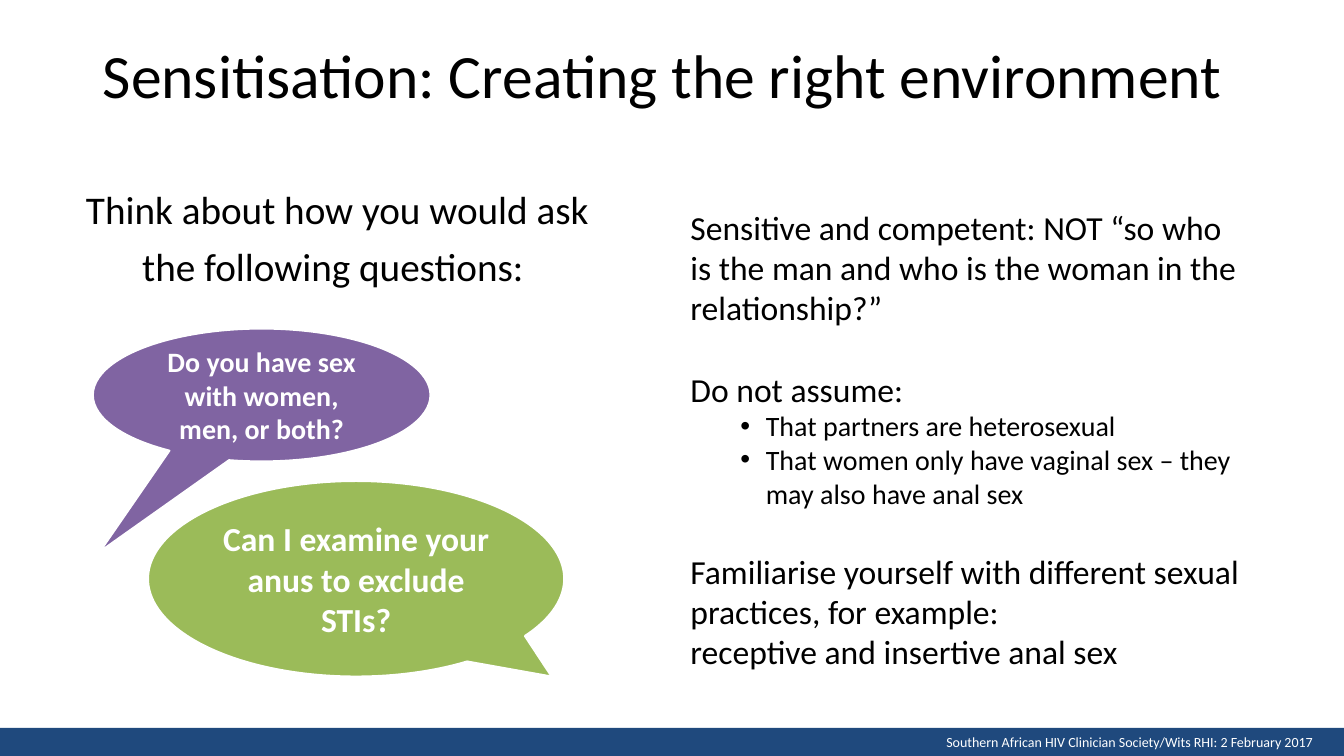
from lxml import etree
from pptx import Presentation
from pptx.dml.color import RGBColor
from pptx.enum.shapes import MSO_SHAPE
from pptx.enum.text import MSO_ANCHOR, PP_ALIGN
from pptx.oxml.ns import qn
from pptx.util import Cm, Pt

RECTANGLE = MSO_SHAPE.RECTANGLE
CALLOUT = MSO_SHAPE.OVAL_CALLOUT
LEFT, CENTER = PP_ALIGN.LEFT, PP_ALIGN.CENTER
MIDDLE = MSO_ANCHOR.MIDDLE

FONT = "Calibri"
COLORS = {
    "text": "000000",
    "white": "FFFFFF",
    "bar": "1F497D",
    "purple": "8064A2",
    "green": "9BBB59",
}
SECTION_GAP = 29.3  # one line of 24 pt text

# Text, size, bulleted, space before
ADVICE = [
    ("Sensitive and competent: NOT “so who is the man and who is the woman "
     "in the relationship?”", 24, False, 0),
    ("Do not assume:", 24, False, SECTION_GAP),
    ("That partners are heterosexual", 20, True, 0),
    ("That women only have vaginal sex – they may also have anal sex", 20, True, 0),
    ("Familiarise yourself with different sexual practices, for example:",
     24, False, SECTION_GAP),
    ("receptive and insertive anal sex", 24, False, 0),
]


def color(name):
    return RGBColor.from_string(COLORS[name])


def style(paragraph, size, color_name="text", bold=False, align=LEFT):
    paragraph.alignment = align
    paragraph.font.name = FONT
    paragraph.font.size = Pt(size)
    paragraph.font.bold = bold
    paragraph.font.color.rgb = color(color_name)


def add_bullet(paragraph):
    properties = paragraph._p.get_or_add_pPr()
    properties.set("marL", str(Cm(1.9)))
    properties.set("indent", str(-Cm(0.64)))
    etree.SubElement(properties, qn("a:buFont")).set("typeface", "Arial")
    etree.SubElement(properties, qn("a:buChar")).set("char", "•")


def add_text_frame(page, place, wrap=True):
    box = page.shapes.add_textbox(*map(Cm, place))
    box.text_frame.word_wrap = wrap
    return box.text_frame


def add_line_of_text(page, place, text, size, color_name="text", align=LEFT,
                     spacing=1.0, wrap=True):
    paragraph = add_text_frame(page, place, wrap).paragraphs[0]
    paragraph.text = text
    paragraph.line_spacing = spacing
    style(paragraph, size, color_name, align=align)


def add_advice(page, place):
    frame = add_text_frame(page, place)
    for index, (text, size, bulleted, gap) in enumerate(ADVICE):
        paragraph = frame.add_paragraph() if index else frame.paragraphs[0]
        paragraph.text = text
        paragraph.space_before = Pt(gap)
        if bulleted:
            add_bullet(paragraph)
        style(paragraph, size)


def add_filled_shape(page, kind, place, fill):
    shape = page.shapes.add_shape(kind, *map(Cm, place))
    shape.shadow.inherit = False
    shape.fill.solid()
    shape.fill.fore_color.rgb = color(fill)
    shape.line.fill.background()
    return shape


def add_callout(page, place, tip, fill, text, size):
    callout = add_filled_shape(page, CALLOUT, place, fill)
    callout.adjustments[0], callout.adjustments[1] = tip
    callout.line.color.rgb = color("white")
    callout.line.width = Pt(1.5)
    frame = callout.text_frame
    frame.word_wrap = True
    frame.vertical_anchor = MIDDLE
    frame.paragraphs[0].text = text
    style(frame.paragraphs[0], size, "white", bold=True, align=CENTER)


def main():
    deck = Presentation()
    deck.slide_width, deck.slide_height = Cm(33.87), Cm(19.05)
    page = deck.slides.add_slide(deck.slide_layouts[6])

    # Footer
    add_filled_shape(page, RECTANGLE, (0, 18.34, 33.87, 0.71), "bar")
    add_line_of_text(page, (23.6, 18.36, 9.8, 0.69),
                     "Southern African HIV Clinician Society/Wits RHI: 2 February 2017",
                     10, "white", wrap=False)

    # Title and the two columns
    add_line_of_text(page, (2.34, 1.02, 29.21, 3.68),
                     "Sensitisation: Creating the right environment", 44, spacing=0.9)
    add_line_of_text(page, (1.3, 4.32, 14.4, 5.13),
                     "Think about how you would ask the following questions: ",
                     28, align=CENTER, spacing=1.2)
    add_advice(page, (17.15, 5.08, 14.4, 11.94))

    # Example questions
    add_callout(page, (2.34, 8.28, 8.51, 3.35), (-0.48, 1.18), "purple",
                "Do you have sex with women, men, or both?", 20)
    add_callout(page, (3.73, 12.12, 10.49, 4.93), (0.47, 0.5), "green",
                "Can I examine your anus to exclude STIs?", 24)

    deck.save("out.pptx")


if __name__ == "__main__":
    main()
